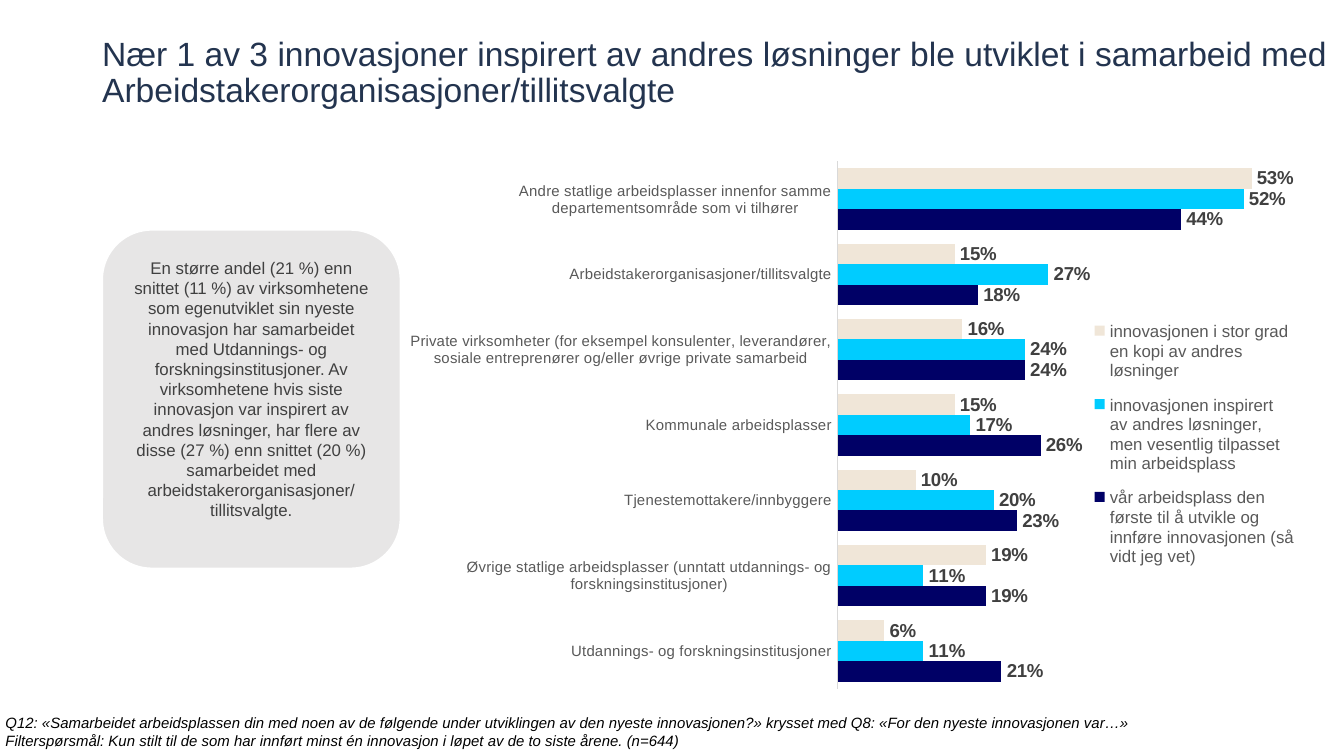
from lxml import etree
from pptx import Presentation
from pptx.chart.data import CategoryChartData
from pptx.dml.color import RGBColor
from pptx.enum.chart import (XL_CHART_TYPE, XL_LABEL_POSITION,
                             XL_LEGEND_POSITION, XL_TICK_LABEL_POSITION,
                             XL_TICK_MARK)
from pptx.enum.shapes import MSO_SHAPE
from pptx.enum.text import MSO_ANCHOR, MSO_AUTO_SIZE, PP_ALIGN
from pptx.oxml import parse_xml
from pptx.oxml.ns import nsdecls
from pptx.util import Inches, Pt

BARS = XL_CHART_TYPE.BAR_CLUSTERED
OUT_END = XL_LABEL_POSITION.OUTSIDE_END
RIGHT = XL_LEGEND_POSITION.RIGHT
NO_TICK = XL_TICK_MARK.NONE
BESIDE = XL_TICK_LABEL_POSITION.NEXT_TO_AXIS
ROUND = MSO_SHAPE.ROUNDED_RECTANGLE
TOP, MIDDLE, BOTTOM = MSO_ANCHOR.TOP, MSO_ANCHOR.MIDDLE, MSO_ANCHOR.BOTTOM
LEFT, CENTER = PP_ALIGN.LEFT, PP_ALIGN.CENTER
NO_FIT = MSO_AUTO_SIZE.NONE

WIDE = 10
HIGH = WIDE * 9 / 16
EDGE = 0.76
GREY = "595959"

TITLE = ("Nær 1 av 3 innovasjoner inspirert av andres løsninger ble utviklet "
         "i samarbeid med Arbeidstakerorganisasjoner/tillitsvalgte")
NOTE = ("En større andel (21 %) enn snittet (11 %) av virksomhetene som "
        "egenutviklet sin nyeste innovasjon har samarbeidet med Utdannings- "
        "og forskningsinstitusjoner. Av virksomhetene hvis siste innovasjon "
        "var inspirert av andres løsninger, har flere av disse (27 %) enn "
        "snittet (20 %) samarbeidet med arbeidstakerorganisasjoner/ "
        "tillitsvalgte.")
FOOT = [
    "Q12: «Samarbeidet arbeidsplassen din med noen av de følgende under "
    "utviklingen av den nyeste innovasjonen?» krysset med Q8: «For den "
    "nyeste innovasjonen var…»",
    "Filterspørsmål: Kun stilt til de som har innført minst én innovasjon "
    "i løpet av de to siste årene. (n=644)",
]
PARTNERS = [
    "Utdannings- og forskningsinstitusjoner",
    "Øvrige statlige arbeidsplasser (unntatt utdannings- og "
    "forskningsinstitusjoner)",
    "Tjenestemottakere/innbyggere",
    "Kommunale arbeidsplasser",
    "Private virksomheter (for eksempel konsulenter, leverandører, sosiale "
    "entreprenører og/eller øvrige private samarbeid",
    "Arbeidstakerorganisasjoner/tillitsvalgte",
    "Andre statlige arbeidsplasser innenfor samme departementsområde som vi "
    "tilhører",
]
SERIES = [
    ("vår arbeidsplass den første til å utvikle og innføre innovasjonen "
     "(så vidt jeg vet)", "000066",
     [0.21, 0.19, 0.23, 0.26, 0.24, 0.18, 0.44]),
    ("innovasjonen inspirert av andres løsninger, men vesentlig tilpasset "
     "min arbeidsplass", "00CCFF",
     [0.11, 0.11, 0.20, 0.17, 0.24, 0.27, 0.52]),
    ("innovasjonen i stor grad en kopi av andres løsninger", "F0E6D8",
     [0.06, 0.19, 0.10, 0.15, 0.16, 0.15, 0.53]),
]


def rgb(code):
    return RGBColor.from_string(code)


def apply(item, **values):
    for name, value in values.items():
        setattr(item, name, value)


def style(font, size, color, **more):
    apply(font, name="Arial", size=Pt(size), **more)
    font.color.rgb = rgb(color)


def box(*lengths):
    return [Inches(n) for n in lengths]


def write(shape, lines, size, color, anchor, align, inset=(0, 0, 0, 0),
          **more):
    """Fill a shape with one paragraph per line; inset is l, t, r, b."""
    sides = ("margin_left", "margin_top", "margin_right", "margin_bottom")
    frame = shape.text_frame
    apply(frame, word_wrap=True, auto_size=NO_FIT, vertical_anchor=anchor,
          **dict(zip(sides, box(*inset))))
    frame.text = "\n".join(lines)
    for para in frame.paragraphs:
        para.alignment = align
        style(para.font, size, color, **more)


def place(part, x, y, w, h, inner=False):
    """Set a manual layout, in shares of the chart's size."""
    for old in part.findall("{*}layout"):
        part.remove(old)
    target = '<c:layoutTarget val="inner"/>' if inner else ""
    modes = "".join(f'<c:{n}Mode val="edge"/>' for n in "xy")
    sizes = "".join(f'<c:{n} val="{v}"/>' for n, v in zip("xywh", (x, y, w, h)))
    layout = parse_xml(f'<c:layout {nsdecls("c")}><c:manualLayout>{target}'
                       f'{modes}{sizes}</c:manualLayout></c:layout>')
    if inner:
        part.insert(0, layout)
    else:
        part.find("{*}legendPos").addnext(layout)


def add_title(slide):
    title = slide.shapes.title
    spots = ("left", "top", "width", "height")
    apply(title, **dict(zip(spots, box(EDGE, 0.49, 9.15, 0.33))))
    write(title, [TITLE], 18, "23344F", BOTTOM, LEFT)
    title.text_frame.paragraphs[0].line_spacing = 0.9


def add_foot(slide):
    foot = slide.shapes.add_textbox(*box(0.04, 5.31, 8.49, 0.27))
    write(foot, FOOT, 8, "000000", TOP, LEFT, italic=True)


def add_note(slide):
    note = slide.shapes.add_shape(ROUND, *box(EDGE, 1.71, 2.22, 2.52))
    note.shadow.inherit = False
    note.fill.solid()
    note.fill.fore_color.rgb = rgb("E7E6E6")
    note.line.color.rgb = rgb("FFFFFF")
    note.line.width = Pt(1)
    write(note, [NOTE], 9, "404040", MIDDLE, CENTER, (0.1, 0.05, 0.1, 0.2))


def style_axes(chart):
    cats, vals = chart.category_axis, chart.value_axis
    apply(cats, major_tick_mark=NO_TICK, minor_tick_mark=NO_TICK,
          tick_label_position=BESIDE, has_major_gridlines=False)
    style(cats.tick_labels.font, 8, GREY)
    cats.format.line.color.rgb = rgb("D9D9D9")
    cats.format.line.width = Pt(0.75)
    apply(vals, visible=False, has_major_gridlines=False,
          major_tick_mark=NO_TICK, minimum_scale=0, maximum_scale=0.6)


def style_bars(plot):
    apply(plot, gap_width=70, overlap=0, vary_by_categories=False)
    for bars, (_, color, _) in zip(plot.series, SERIES):
        bars.format.fill.solid()
        bars.format.fill.fore_color.rgb = rgb(color)
        labels = bars.data_labels
        apply(labels, show_value=True, position=OUT_END, number_format="0%",
              number_format_is_linked=False)
        style(labels.font, 10, "404040", bold=True)


def add_chart(slide):
    data = CategoryChartData(number_format="0%")
    data.categories = PARTNERS
    for name, _, values in SERIES:
        data.add_series(name, values)
    frame = slide.shapes.add_chart(BARS, *box(2.96, 1.05, 6.76, 4.43), data)
    chart = frame.chart
    apply(chart, has_title=False, has_legend=True)
    style(chart.font, 10, "000000")
    style_axes(chart)
    style_bars(chart.plots[0])
    legend = chart.legend
    apply(legend, position=RIGHT, include_in_layout=True)
    style(legend.font, 9, GREY)
    area = etree.ETXPath(f"//{{{chart.element.nsmap['c']}}}plotArea")
    place(area(chart.element)[0], 0.484, 0.034, 0.516, 0.886, inner=True)
    place(chart.element.find(".//{*}legend"), 0.77, 0.28, 0.22, 0.46)


def main():
    deck = Presentation()
    apply(deck, slide_width=Inches(WIDE), slide_height=Inches(HIGH))
    slide = deck.slides.add_slide(deck.slide_layouts[5])
    add_title(slide)
    add_foot(slide)
    add_chart(slide)
    add_note(slide)
    deck.save("out.pptx")


if __name__ == "__main__":
    main()
